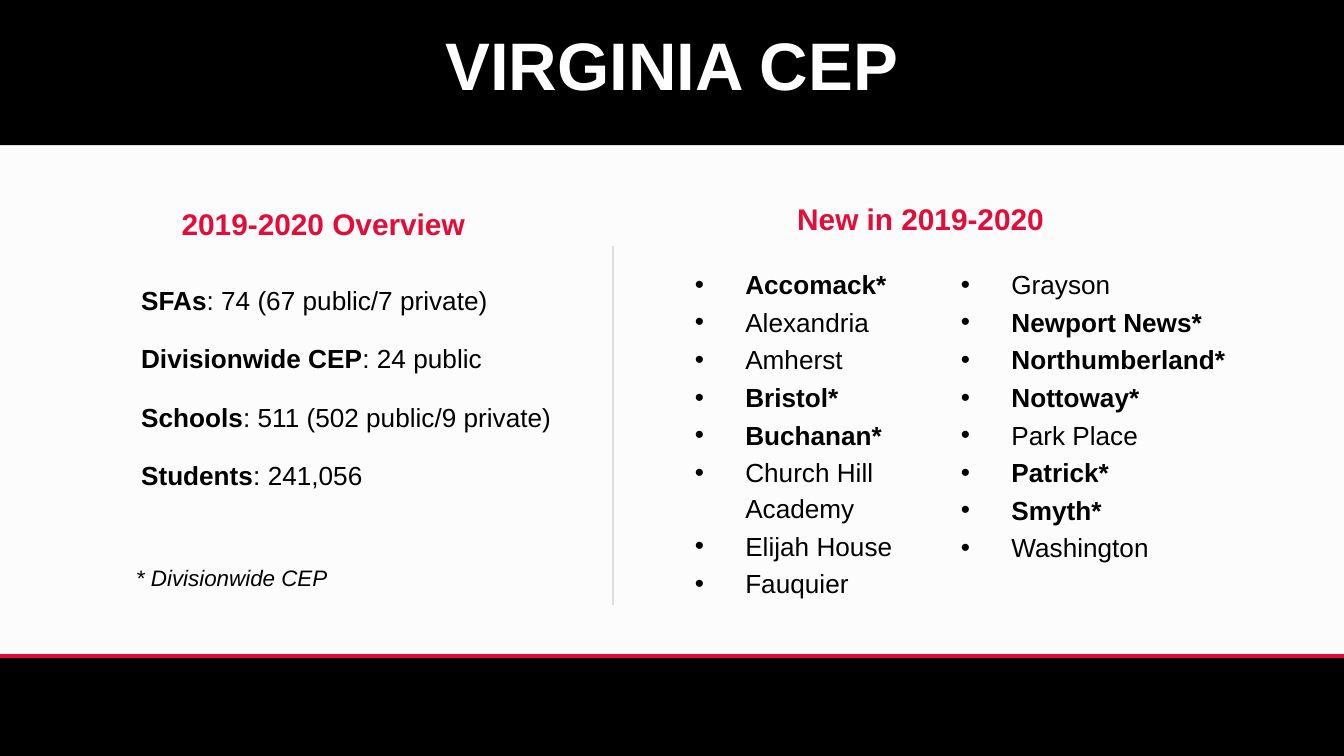
"""Build the Virginia CEP slide: an overview beside a two-column list of new members."""
from lxml.etree import SubElement
from pptx import Presentation
from pptx.dml.color import RGBColor
from pptx.enum.shapes import MSO_CONNECTOR, MSO_SHAPE
from pptx.enum.text import MSO_ANCHOR, MSO_AUTO_SIZE, PP_ALIGN
from pptx.oxml.ns import qn
from pptx.util import Inches, Pt

BLACK, WHITE, RED, GREY, PALE = "000000", "FFFFFF", "E20D38", "DDDDDD", "FCFCFC"
SIDES = ("left", "top", "width", "height")

deck = Presentation()
deck.slide_width = Inches(10)
deck.slide_height = deck.slide_width * 9 // 16
COL = ROW = deck.slide_width / 100
slide = deck.slides.add_slide(deck.slide_layouts[3])
shapes = slide.shapes
title, facts, names = slide.placeholders


def hue(code):
    """Turn a hex string into a colour."""
    return RGBColor.from_string(code)


def write(box, spot, rows, size, color=BLACK, align=PP_ALIGN.LEFT, gap=0, lead=1.14, mark=None, indent=0, slant=False):
    """Place a box and fill it with rows of (text, bold) runs."""
    for side, value in zip(SIDES, spot):
        setattr(box, side, int(value * COL))
    frame = box.text_frame
    frame.word_wrap, frame.auto_size = True, MSO_AUTO_SIZE.NONE
    look = {"alignment": align, "line_spacing": lead, "space_before": Pt(0), "space_after": Pt(gap)}
    for i, row in enumerate(rows):
        para = frame.add_paragraph() if i else frame.paragraphs[0]
        props = para._p.get_or_add_pPr()
        props.set("marL", str(int(indent * COL)))
        props.set("indent", str(int(-indent * COL)))
        if mark:
            SubElement(props, qn("a:buChar"), char=mark)
        else:
            SubElement(props, qn("a:buNone"))
        for key, value in look.items():
            setattr(para, key, value)
        for text, bold in row:
            run = para.add_run()
            run.text = text
            font = {"name": "Arial", "size": Pt(size), "bold": bold, "italic": slant}
            for key, value in font.items():
                setattr(run.font, key, value)
            run.font.color.rgb = hue(color)


tree = shapes._spTree
for depth, (spot, fill) in enumerate([((-2.8, 48.8, 105.6, 7.5), BLACK), ((0, 8.4, 100, 40.3), PALE)]):
    band = shapes.add_shape(MSO_SHAPE.RECTANGLE, *(int(v * COL) for v in spot))
    band.shadow.inherit = False
    band.fill.solid()
    band.fill.fore_color.rgb = hue(fill)
    band.line.fill.background()
    tree.insert(2 + depth, band._element)

rules = [((-2.9, 48.8, 102.8, 48.8), RED, 2), ((45.6, 18.3, 45.6, 45), GREY, 1)]
for (x, y, right, low), color, width in rules:
    ends = int(x * COL), int(y * ROW), int(right * COL), int(low * ROW)
    rule = shapes.add_connector(MSO_CONNECTOR.STRAIGHT, *ends)
    rule.line.color.rgb = hue(color)
    rule.line.width = Pt(width)
    SubElement(rule._element.spPr, qn("a:effectLst"))

title.fill.solid()
title.fill.fore_color.rgb = hue(BLACK)
pads = {"margin_left": int(5 * COL), "margin_right": int(5 * COL), "margin_top": 0,
        "margin_bottom": 0, "vertical_anchor": MSO_ANCHOR.MIDDLE}
for key, value in pads.items():
    setattr(title.text_frame, key, value)
write(title, (-0.9, -1.3, 101.8, 12.1), [[("VIRGINIA CEP", True)]], 36, WHITE, PP_ALIGN.CENTER, lead=1.0)

stats = {
    "SFAs": "74 (67 public/7 private)",
    "Divisionwide CEP": "24 public",
    "Schools": "511 (502 public/9 private)",
    "Students": "241,056",
}
rows = [[(key, True), (f": {value}", False)] for key, value in stats.items()]
write(facts, (9.5, 20.35, 35.8, 16.6), rows, 14, gap=12)

places = [
    "Accomack*", "Alexandria", "Amherst", "Bristol*", "Buchanan*", "Church Hill Academy",
    "Elijah House", "Fauquier", "Grayson", "Newport News*", "Northumberland*", "Nottoway*",
    "Park Place", "Patrick*", "Smyth*", "Washington",
]
rows = [[(place, place.endswith("*"))] for place in places]
write(names, (50.7, 19.15, 41.6, 25.4), rows, 14, gap=1, mark="•", indent=3.75)
names.text_frame._txBody.bodyPr.set("numCol", "2")

heads = {"2019-2020 Overview": (12, 14.45, 24.1, 3.8), "New in 2019-2020": (58, 14.1, 21, 3.8)}
for text, spot in heads.items():
    write(shapes.add_textbox(0, 0, 0, 0), spot, [[(text, True)]], 16, RED, PP_ALIGN.CENTER)
note = [[("* Divisionwide CEP", False)]]
write(shapes.add_textbox(0, 0, 0, 0), (5.7, 41.5, 23.1, 3), note, 12, align=PP_ALIGN.CENTER, lead=1.0, slant=True)

deck.save("out.pptx")
